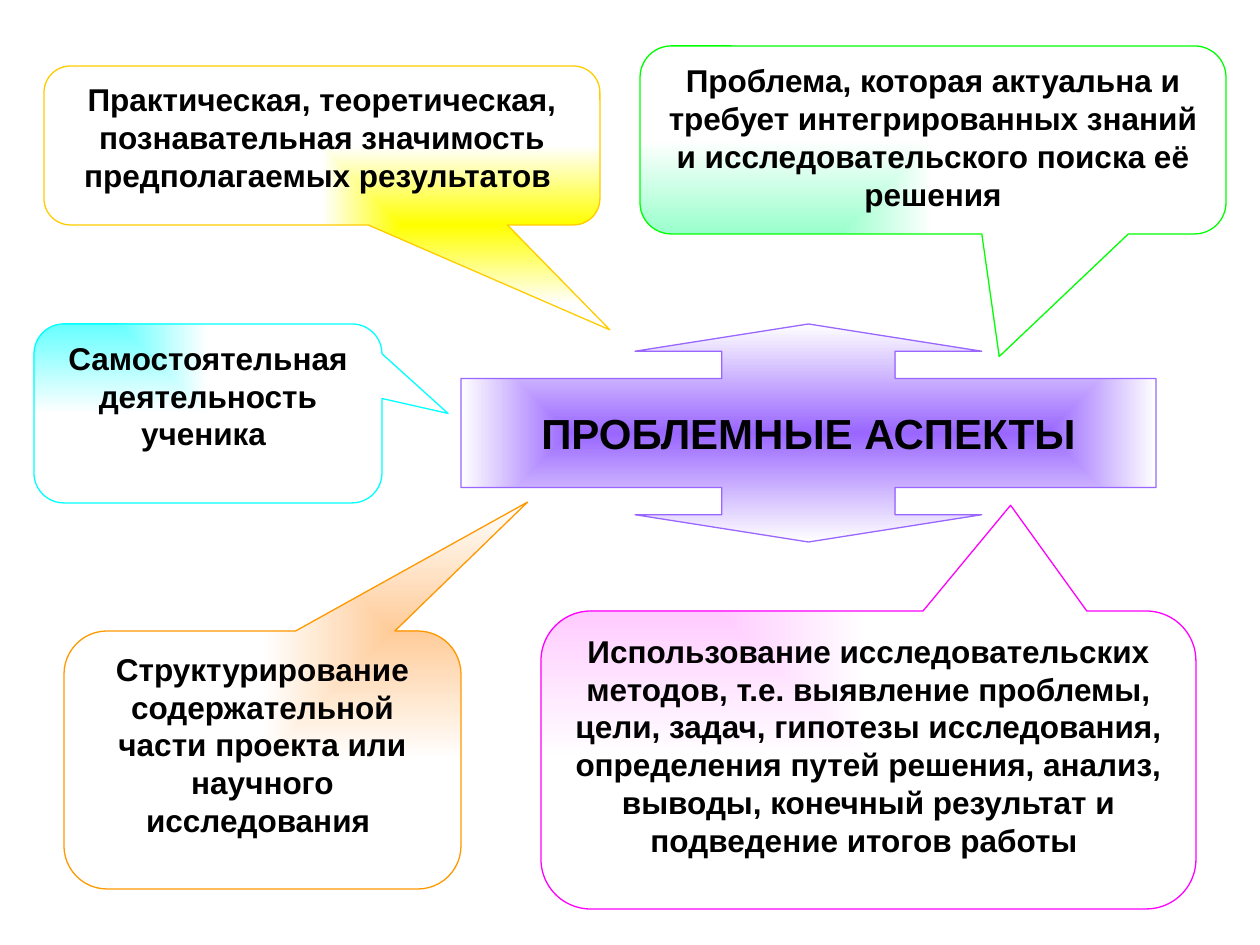
import pptx
import pptx.dml.color
import pptx.enum.shapes
import pptx.enum.text
import pptx.oxml
import pptx.oxml.ns
import pptx.util

EMU_PER_PX = 914400 / 126
SHAPES = pptx.enum.shapes.MSO_SHAPE
ANCHORS = pptx.enum.text.MSO_ANCHOR

COLOURS = {
    "text": "000000", "fade": "FFFFFF",
    "pink": "FFCCFF", "magenta": "FF00FF",
    "violet": "9966FF",
    "yellow": "FFFF00", "gold": "FFCC00",
    "mint": "99FFCC", "green": "00FF00",
    "aqua": "66FFFF", "cyan": "00FFFF",
    "peach": "FFCC99", "orange": "FF9900",
}


def rgb(name):
    return pptx.dml.color.RGBColor.from_string(COLOURS[name])


def add_panel(kind, box, adjustments, fill, focus, outline, wording, size, anchor, wrap):
    """Add a shape whose gradient spreads from focus (x, y in percent) to white."""
    panel = slide.shapes.add_shape(
        kind, *[pptx.util.Emu(round(px * EMU_PER_PX)) for px in box])
    panel.shadow.inherit = False
    for index, value in enumerate(adjustments):
        panel.adjustments[index] = value

    panel.fill.gradient()
    for stop, colour in zip(panel.fill.gradient_stops, (fill, "fade")):
        stop.color.rgb = rgb(colour)
    x, y = focus
    linear = panel.element.spPr.find(".//" + pptx.oxml.ns.qn("a:lin"))
    linear.getparent().replace(linear, pptx.oxml.parse_xml(
        f'<a:path {pptx.oxml.ns.nsdecls("a")} path="rect"><a:fillToRect '
        f'l="{x * 1000}" t="{y * 1000}" r="{(100 - x) * 1000}" b="{(100 - y) * 1000}"/></a:path>'))
    panel.line.color.rgb = rgb(outline)
    panel.line.width = pptx.util.Pt(0.75)

    frame = panel.text_frame
    frame.word_wrap = wrap
    frame.vertical_anchor = anchor
    paragraph = frame.paragraphs[0]
    paragraph.alignment = pptx.enum.text.PP_ALIGN.CENTER
    run = paragraph.add_run()
    run.text = wording
    run.font.name = "Arial"
    run.font.size = pptx.util.Pt(size)
    run.font.bold = True
    run.font.color.rgb = rgb("text")


presentation = pptx.Presentation()
presentation.slide_width = pptx.util.Emu(round(1260 * EMU_PER_PX))
presentation.slide_height = pptx.util.Emu(round(945 * EMU_PER_PX))
slide = presentation.slides.add_slide(presentation.slide_layouts[6])

add_panel(SHAPES.UP_DOWN_ARROW_CALLOUT, (461, 324, 695, 218), (0.795, 0.795, 0.125, 0.5),
          "violet", (50, 50), "violet", "ПРОБЛЕМНЫЕ АСПЕКТЫ", 24, ANCHORS.MIDDLE, False)

# box, pointer tip, fill, gradient focus, outline, wording
aspects = [
    ((541, 611, 655, 298), (0.217, -0.855), "pink", (0, 0), "magenta",
     "Использование исследовательских методов, т.е. выявление проблемы, цели, задач, "
     "гипотезы исследования, определения путей решения, анализ, выводы, "
     "конечный результат и подведение итогов работы "),
    ((44, 66, 556, 159), (0.518, 1.16), "yellow", (100, 100), "gold",
     "Практическая, теоретическая, познавательная значимость предполагаемых результатов "),
    ((640, 46, 586, 188), (0.113, 1.152), "mint", (0, 100), "green",
     "Проблема, которая актуальна и требует интегрированных знаний "
     "и исследовательского поиска её решения"),
    ((34, 324, 348, 179), (0.69, 0), "aqua", (0, 0), "cyan",
     "Самостоятельная деятельность ученика "),
    ((64, 631, 397, 258), (0.668, -1), "peach", (100, 0), "orange",
     "Структурирование содержательной части проекта или научного исследования "),
]
for box, tip, fill, focus, outline, wording in aspects:
    add_panel(SHAPES.ROUNDED_RECTANGULAR_CALLOUT, box, (*tip, 0.167),
              fill, focus, outline, wording, 18, ANCHORS.TOP, True)

presentation.save("out.pptx")
